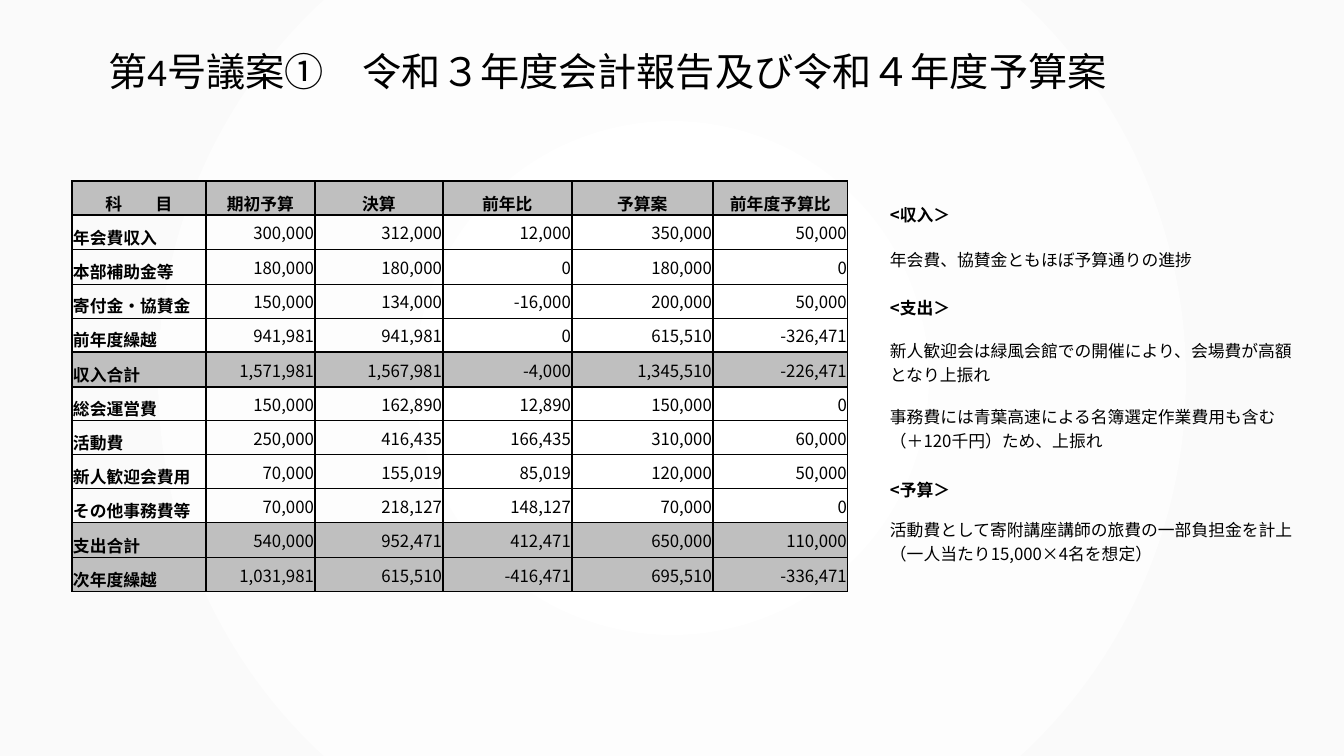
from dataclasses import dataclass

from pptx import Presentation
from pptx import util as u
from pptx.dml.color import RGBColor
from pptx.enum import text
from pptx.oxml import parse_xml
from pptx.oxml.ns import qn
from pptx.oxml.xmlchemy import OxmlElement

NO_STYLE = "{2D5ABB26-0587-4C30-8999-92F81FD0307C}"
NAMESPACE = "http://schemas.openxmlformats.org/drawingml/2006/main"


@dataclass(frozen=True)
class Theme:
    ink: str = "000000"
    shade: str = "BFBFBF"
    centre: str = "FFFFFF"
    edge: str = "FAFAFA"
    title_font: str = "Calibri"
    body_font: str = "Noto Sans CJK JP"
    title_size: int = 28
    body_size: int = 12


@dataclass(frozen=True)
class Account:
    label: str
    figures: tuple[str, ...]
    total: bool = False


@dataclass(frozen=True)
class Note:
    wording: str
    height: int
    heading: bool = False
    spans: bool = True


@dataclass(frozen=True)
class CellFormat:
    align: text.PP_ALIGN
    anchor: text.MSO_ANCHOR
    bold: bool = False


THEME = Theme()
HEADER_FORMAT = CellFormat(text.PP_ALIGN.CENTER, text.MSO_ANCHOR.BOTTOM, True)
LABEL_FORMAT = CellFormat(text.PP_ALIGN.JUSTIFY, text.MSO_ANCHOR.BOTTOM, True)
FIGURE_FORMAT = CellFormat(text.PP_ALIGN.RIGHT, text.MSO_ANCHOR.MIDDLE)

HEADERS = ("科　　目", "期初予算", "決算", "前年比", "予算案", "前年度予算比")
ACCOUNTS = (
    Account("年会費収入", ("300,000", "312,000", "12,000", "350,000", "50,000")),
    Account("本部補助金等", ("180,000", "180,000", "0", "180,000", "0")),
    Account("寄付金・協賛金", ("150,000", "134,000", "-16,000", "200,000", "50,000")),
    Account("前年度繰越", ("941,981", "941,981", "0", "615,510", "-326,471")),
    Account("収入合計", ("1,571,981", "1,567,981", "-4,000", "1,345,510", "-226,471"), True),
    Account("総会運営費", ("150,000", "162,890", "12,890", "150,000", "0")),
    Account("活動費", ("250,000", "416,435", "166,435", "310,000", "60,000")),
    Account("新人歓迎会費用", ("70,000", "155,019", "85,019", "120,000", "50,000")),
    Account("その他事務費等", ("70,000", "218,127", "148,127", "70,000", "0")),
    Account("支出合計", ("540,000", "952,471", "412,471", "650,000", "110,000"), True),
    Account("次年度繰越", ("1,031,981", "615,510", "-416,471", "695,510", "-336,471"), True),
)
NOTES = (
    Note("<収入＞", 40, True),
    Note("年会費、協賛金ともほぼ予算通りの進捗", 50),
    Note("<支出＞", 45, True, spans=False),
    Note("新人歓迎会は緑風会館での開催により、会場費が高額となり上振れ", 66),
    Note("事務費には青葉高速による名簿選定作業費用も含む（＋120千円）ため、上振れ", 66),
    Note("<予算＞", 55, True),
    Note("活動費として寄附講座講師の旅費の一部負担金を計上（一人当たり15,000×4名を想定）", 45),
)

ACCOUNT_COLUMNS = (134, 109, 128, 129, 141, 135)
NOTE_COLUMNS = (71, 57, 68, 68, 75, 72)
SPACER_HEIGHT, GRID_HEIGHT = 69, 411
# Line widths in points, one for each grid edge
VERTICAL_RULES = (1, 1, 1, 1.5, 1.5, 1.5, 1)
HORIZONTAL_RULES = (1, 1.5, 0.5, 0.5, 0.5, 1.5, 1.5, 0.5, 0.5, 0.5, 0.5, 0.5, 1)


def px(length: int) -> u.Emu:
    return u.Emu(round(length * 914400 / 100.8))


def apply(target, values: dict) -> None:
    for name, value in values.items():
        setattr(target, name, value)


def style_run(run, font: str, size: int, bold: bool = False) -> None:
    apply(run.font, {"name": font, "size": u.Pt(size), "bold": bold})
    run.font.color.rgb = RGBColor.from_string(THEME.ink)


def paint_background(slide) -> None:
    """Fill the slide with a circular gradient from its middle."""
    slide.background.fill.solid()
    solid = slide.background._cSld.bg.bgPr.find(qn("a:solidFill"))
    stops = "".join(
        f'<a:gs pos="{position}"><a:srgbClr val="{colour}"/></a:gs>'
        for position, colour in ((0, THEME.centre), (100000, THEME.edge))
    )
    gradient = parse_xml(
        f'<a:gradFill xmlns:a="{NAMESPACE}" rotWithShape="1"><a:gsLst>{stops}</a:gsLst>'
        '<a:path path="circle"><a:fillToRect l="50000" t="50000" r="50000" b="50000"/>'
        "</a:path></a:gradFill>"
    )
    solid.getparent().replace(solid, gradient)


def add_title(slide, wording: str) -> None:
    title = slide.shapes.title
    apply(title, {"left": px(98), "top": px(16), "width": px(1166), "height": px(116)})
    apply(title.text_frame, {"vertical_anchor": text.MSO_ANCHOR.MIDDLE, "word_wrap": True})
    paragraph = title.text_frame.paragraphs[0]
    apply(paragraph, {"alignment": text.PP_ALIGN.LEFT, "line_spacing": 0.9})
    run = paragraph.add_run()
    run.text = wording
    style_run(run, THEME.title_font, THEME.title_size)


def add_plain_table(slide, left: int, top: int, columns: tuple[int, ...], rows: list[int]):
    frame = slide.shapes.add_table(
        len(rows), len(columns), px(left), px(top), px(sum(columns)), px(sum(rows))
    )
    table = frame.table
    apply(table, {"first_row": False, "horz_banding": False})
    table._tbl.tblPr.find(qn("a:tableStyleId")).text = NO_STYLE
    for column, width in zip(table.columns, columns):
        column.width = px(width)
    for row, height in zip(table.rows, rows):
        row.height = px(height)
    return table


def write_cell(cell, wording: str, style: CellFormat) -> None:
    apply(cell, {
        "margin_left": px(1), "margin_right": px(1), "margin_top": px(1),
        "margin_bottom": 0, "vertical_anchor": style.anchor,
    })
    paragraph = cell.text_frame.paragraphs[0]
    paragraph.alignment = style.align
    run = paragraph.add_run()
    run.text = wording
    style_run(run, THEME.body_font, THEME.body_size, style.bold)
    east_asian = OxmlElement("a:ea")
    east_asian.set("typeface", THEME.body_font)
    run.font._element.find(qn("a:latin")).addnext(east_asian)


def rule_cell(cell, widths: dict[str, float]) -> None:
    """Draw the cell borders, keyed by side in the order L, R, T, B."""
    properties = cell._tc.get_or_add_tcPr()
    for index, (side, width) in enumerate(widths.items()):
        properties.insert(index, parse_xml(
            f'<a:ln{side} xmlns:a="{NAMESPACE}" w="{u.Pt(width)}"><a:solidFill>'
            f'<a:srgbClr val="{THEME.ink}"/></a:solidFill></a:ln{side}>'
        ))


def add_accounts(slide) -> None:
    count = len(ACCOUNTS) + 1
    edges = [round(index * GRID_HEIGHT / count) for index in range(count + 1)]
    heights = [low - high for high, low in zip(edges, edges[1:])]
    table = add_plain_table(slide, 72, 112, ACCOUNT_COLUMNS, [SPACER_HEIGHT, *heights])
    table.cell(0, 0).merge(table.cell(0, len(HEADERS) - 1))
    for row, account in enumerate((Account("", (), True), *ACCOUNTS)):
        wordings = (account.label, *account.figures) if row else HEADERS
        for column, wording in enumerate(wordings):
            cell = table.cell(row + 1, column)
            body_format = FIGURE_FORMAT if column else LABEL_FORMAT
            write_cell(cell, wording, body_format if row else HEADER_FORMAT)
            if account.total:
                cell.fill.solid()
                cell.fill.fore_color.rgb = RGBColor.from_string(THEME.shade)
            else:
                cell.fill.background()
            rule_cell(cell, {
                "L": VERTICAL_RULES[column], "R": VERTICAL_RULES[column + 1],
                "T": HORIZONTAL_RULES[row], "B": HORIZONTAL_RULES[row + 1],
            })


def add_notes(slide) -> None:
    table = add_plain_table(slide, 889, 194, NOTE_COLUMNS, [note.height for note in NOTES])
    for row, note in enumerate(NOTES):
        cell = table.cell(row, 0)
        if note.spans:
            cell.merge(table.cell(row, len(NOTE_COLUMNS) - 1))
        write_cell(cell, note.wording,
                   CellFormat(text.PP_ALIGN.LEFT, text.MSO_ANCHOR.MIDDLE, note.heading))


def main() -> None:
    presentation = Presentation()
    apply(presentation, {"slide_width": px(1344), "slide_height": px(756)})
    slide = presentation.slides.add_slide(presentation.slide_layouts.get_by_name("Title Only"))
    paint_background(slide)
    add_title(slide, "第4号議案①　令和３年度会計報告及び令和４年度予算案")
    add_accounts(slide)
    add_notes(slide)
    presentation.save("out.pptx")


if __name__ == "__main__":
    main()
